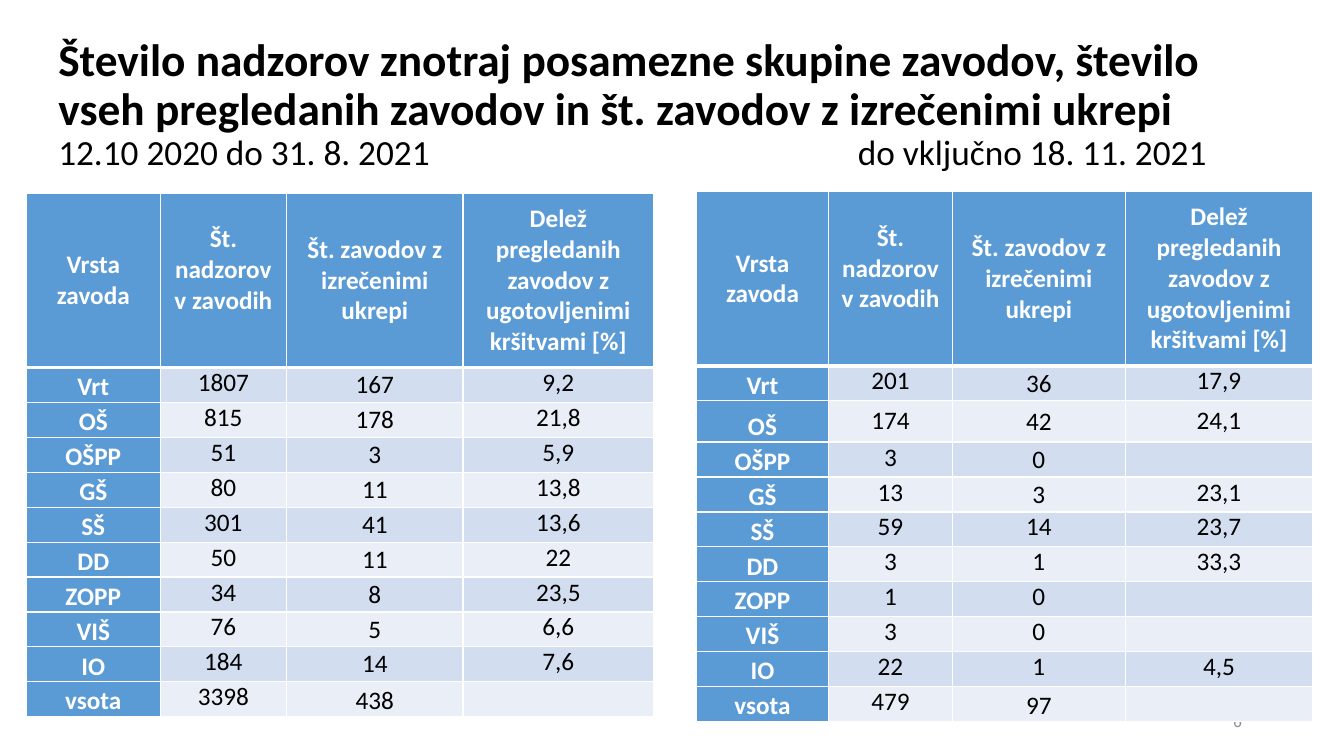
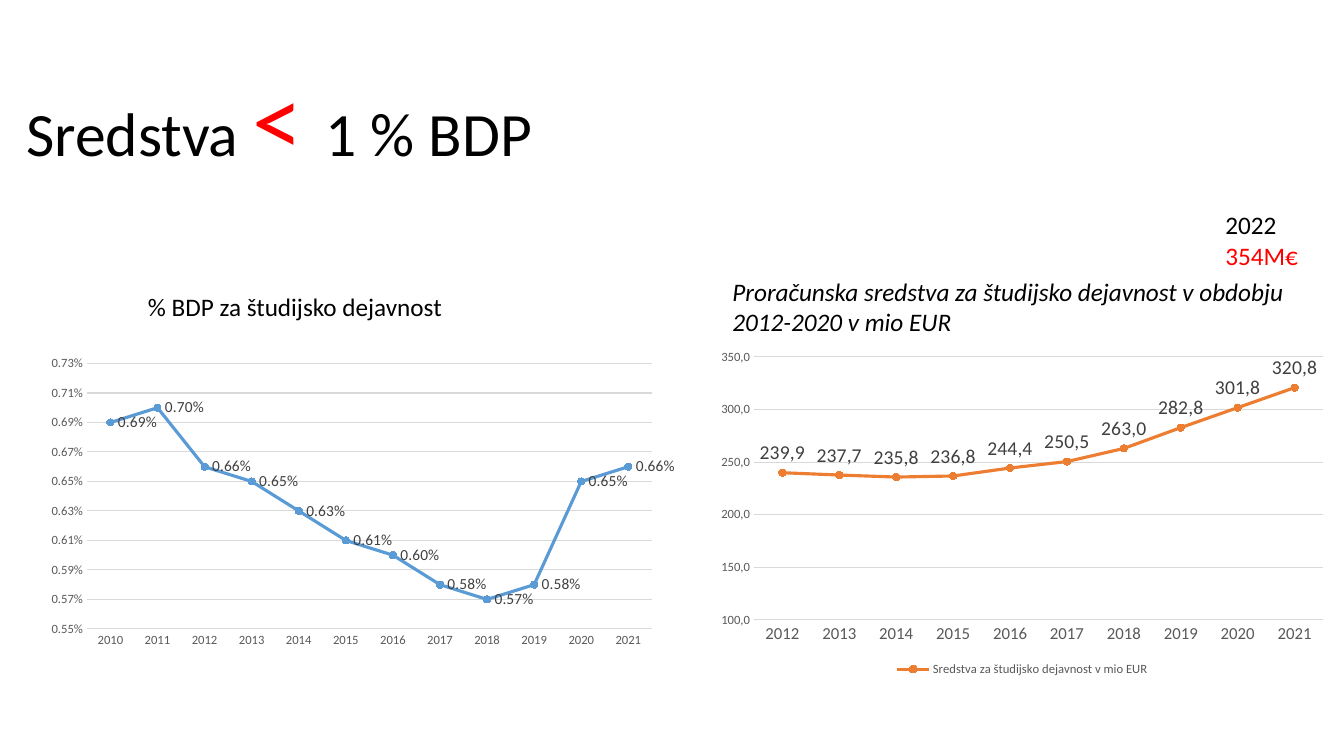
from lxml.etree import SubElement
from pptx import Presentation
from pptx.chart.data import CategoryChartData
from pptx.dml.color import RGBColor
from pptx.enum.chart import (XL_CHART_TYPE, XL_LABEL_POSITION, XL_LEGEND_POSITION,
                             XL_MARKER_STYLE, XL_TICK_MARK)
from pptx.enum.text import MSO_ANCHOR, PP_ALIGN
from pptx.oxml.ns import qn
from pptx.util import Cm, Pt

FONT = "Calibri"
BLACK = RGBColor(0x00, 0x00, 0x00)
WHITE = RGBColor(0xFF, 0xFF, 0xFF)
RED = RGBColor(0xFF, 0x00, 0x00)
BLUE = RGBColor(0x5B, 0x9B, 0xD5)
ORANGE = RGBColor(0xED, 0x7D, 0x31)
BAND_DARK = RGBColor(0xD2, 0xDE, 0xEF)
BAND_LIGHT = RGBColor(0xEA, 0xEF, 0xF7)
NUMBER_GREY = RGBColor(0x8C, 0x8C, 0x8C)
AXIS_GREY = RGBColor(0x59, 0x59, 0x59)
LABEL_GREY = RGBColor(0x40, 0x40, 0x40)
GRID_GREY = RGBColor(0xD9, 0xD9, 0xD9)

HEADER = ["Vrsta zavoda", "Št. nadzorov\nv zavodih", "Št. zavodov z izrečenimi ukrepi",
          "Delež pregledanih zavodov z ugotovljenimi kršitvami [%]"]
GROUPS = ["Vrt", "OŠ", "OŠPP", "GŠ", "SŠ", "DD", "ZOPP", "VIŠ", "IO", "vsota"]
FIRST_PERIOD = [
    ("1807", "167", "9,2"), ("815", "178", "21,8"), ("51", "3", "5,9"), ("80", "11", "13,8"),
    ("301", "41", "13,6"), ("50", "11", "22"), ("34", "8", "23,5"), ("76", "5", "6,6"),
    ("184", "14", "7,6"), ("3398", "438", ""),
]
SECOND_PERIOD = [
    ("201", "36", "17,9"), ("174", "42", "24,1"), ("3", "0", ""), ("13", "3", "23,1"),
    ("59", "14", "23,7"), ("3", "1", "33,3"), ("1", "0", ""), ("3", "0", ""),
    ("22", "1", "4,5"), ("479", "97", ""),
]
GDP_SHARES = [0.0069, 0.0070, 0.0066, 0.0065, 0.0063, 0.0061,
              0.0060, 0.0058, 0.0057, 0.0058, 0.0065, 0.0066]
BUDGET = [239.9, 237.7, 235.8, 236.8, 244.4, 250.5, 263.0, 282.8, 301.8, 320.8]


def style_font(font, size, color, bold=False, italic=False):
    """Set typeface, size, colour and emphasis."""
    font.name, font.size, font.bold, font.italic = FONT, Pt(size), bold, italic
    font.color.rgb = color


def add_span(para, text, size, color=BLACK, **emphasis):
    """Append one styled run to a paragraph."""
    span = para.add_run()
    span.text = text
    style_font(span.font, size, color, **emphasis)


def add_box(page, place, lines, anchor=MSO_ANCHOR.TOP):
    """Add a wrapping text box; each line is a list of (text, size, colour, emphasis)."""
    box = page.shapes.add_textbox(*map(Cm, place))
    frame = box.text_frame
    frame.word_wrap = True
    frame.vertical_anchor = anchor
    for index, spans in enumerate(lines):
        para = frame.add_paragraph() if index else frame.paragraphs[0]
        for text, size, color, emphasis in spans:
            add_span(para, text, size, color, **emphasis)
    return frame


def add_title(page, place, lines):
    """Add a vertically centred title with tight line spacing."""
    frame = add_box(page, place, lines, MSO_ANCHOR.MIDDLE)
    for para in frame.paragraphs:
        para.line_spacing = 0.9
    return frame


def add_tab_stop(para, position):
    """Give a paragraph one left tab stop."""
    stops = SubElement(para._p.get_or_add_pPr(), qn("a:tabLst"))
    SubElement(stops, qn("a:tab"), pos=str(position), algn="l")


def add_borders(cell, top, bottom):
    """Draw white cell borders; top and bottom widths are in points."""
    properties = cell._tc.get_or_add_tcPr()
    for side, width in (("L", 1), ("R", 1), ("T", top), ("B", bottom)):
        line = SubElement(properties, qn(f"a:ln{side}"), w=str(Pt(width)))
        fill = SubElement(line, qn("a:solidFill"))
        SubElement(fill, qn("a:srgbClr"), val=str(WHITE))


def fill_cell(cell, text, color, fill, anchor, bold, padding=(0, 0)):
    """Write centred text into a cell and set its fill, anchor and margins."""
    cell.fill.solid()
    cell.fill.fore_color.rgb = fill
    cell.vertical_anchor = anchor
    cell.margin_left = cell.margin_right = Cm(0.18)
    cell.margin_top, cell.margin_bottom = map(Cm, padding)
    for index, line in enumerate(text.split("\n")):
        para = cell.text_frame.add_paragraph() if index else cell.text_frame.paragraphs[0]
        para.alignment = PP_ALIGN.CENTER
        if line:
            add_span(para, line, 18, color, bold=bold)


def add_inspection_table(page, left, top, widths, records, tall_row=None, top_rows=()):
    """Add a table of inspections by kind of institution."""
    rows = [HEADER] + [(group, *record) for group, record in zip(GROUPS, records)]
    heights = [4.39] + [1.04 if row == tall_row else 0.88 for row in range(1, len(rows))]
    table = page.shapes.add_table(len(rows), len(widths), Cm(left), Cm(top),
                                  Cm(sum(widths)), Cm(sum(heights))).table
    table.first_row = table.horz_banding = False
    for column, width in zip(table.columns, widths):
        column.width = Cm(width)
    for row, texts in enumerate(rows):
        table.rows[row].height = Cm(heights[row])
        band = BAND_DARK if row % 2 else BAND_LIGHT
        for column, text in enumerate(texts):
            cell = table.cell(row, column)
            add_borders(cell, 3 if row == 1 else 1, 1 if row else 3)
            heading = row == 0 or column == 0
            anchor, padding = MSO_ANCHOR.MIDDLE, (0, 0)
            if row == 0:
                if column == 1:
                    anchor, padding = MSO_ANCHOR.TOP, (0.77, 0)
            elif column == 0 or (column == 2 and row == len(rows) - 1):
                anchor = MSO_ANCHOR.BOTTOM
            elif column != 2 or row in top_rows:
                anchor = MSO_ANCHOR.TOP
            if row == tall_row and column:
                padding = (0.13, 0.13)
            fill_cell(cell, text, WHITE if heading else BLACK, BLUE if heading else band,
                      anchor, heading, padding)


def set_plot_area(chart, **fractions):
    """Fix the inner plot area as fractions of the chart."""
    area = chart._chartSpace.chart.plotArea
    layout = area.find(qn("c:layout"))
    if layout is None:
        layout = SubElement(area, qn("c:layout"))
        area.insert(0, layout)
    manual = SubElement(layout, qn("c:manualLayout"))
    SubElement(manual, qn("c:layoutTarget"), val="inner")
    for mode in ("xMode", "yMode"):
        SubElement(manual, qn(f"c:{mode}"), val="edge")
    for key, value in fractions.items():
        SubElement(manual, qn(f"c:{key}"), val=str(value))


def add_line_chart(page, place, kind, name, first_year, values, color, scale,
                   number_format, category_size, label_size, label_position):
    """Add a line chart with markers and value labels, one point a year."""
    data = CategoryChartData(number_format=number_format)
    data.categories = [str(first_year + index) for index in range(len(values))]
    data.add_series(name, values)
    chart = page.shapes.add_chart(kind, *map(Cm, place), data).chart
    chart.has_title = chart.has_legend = False
    style_font(chart.font, 10, BLACK)

    for axis, size in ((chart.category_axis, category_size), (chart.value_axis, 9)):
        axis.major_tick_mark = axis.minor_tick_mark = XL_TICK_MARK.NONE
        style_font(axis.tick_labels.font, size, AXIS_GREY)
    values_axis = chart.value_axis
    values_axis.minimum_scale, values_axis.maximum_scale, values_axis.major_unit = scale
    values_axis.tick_labels.number_format = number_format
    values_axis.tick_labels.number_format_is_linked = False
    values_axis.format.line.fill.background()
    for line in (chart.category_axis.format.line, values_axis.major_gridlines.format.line):
        line.color.rgb = GRID_GREY
        line.width = Pt(0.75)

    plot = chart.plots[0]
    plot.vary_by_categories = False
    series = plot.series[0]
    series.smooth = False
    series.format.line.color.rgb = color
    series.format.line.width = Pt(2.25)
    series.marker.style = XL_MARKER_STYLE.CIRCLE
    series.marker.size = 5
    series.marker.format.fill.solid()
    series.marker.format.fill.fore_color.rgb = color
    series.marker.format.line.color.rgb = color

    labels = series.data_labels
    labels.show_value = True
    labels.position = label_position
    labels.number_format = number_format
    labels.number_format_is_linked = False
    style_font(labels.font, label_size, LABEL_GREY)
    return chart


def build_inspections(page):
    """Build the slide with inspections in two periods."""
    heading = ("Število nadzorov znotraj posamezne skupine zavodov, število vseh "
               "pregledanih zavodov in št. zavodov z izrečenimi ukrepi")
    periods = "12.10 2020 do 31. 8. 2021\tdo vključno 18. 11. 2021"
    title = add_title(page, (1.22, 0.38, 31.57, 4.55),
                      [[(heading, 32.4, BLACK, {"bold": True})], [(periods, 25.2, BLACK, {})]])
    add_tab_stop(title.paragraphs[1], Cm(20.15))
    number = add_box(page, (23.93, 17.65, 7.62, 1.02), [[("6", 12, NUMBER_GREY, {})]],
                     MSO_ANCHOR.MIDDLE)
    number.paragraphs[0].alignment = PP_ALIGN.RIGHT
    add_inspection_table(page, 0.66, 4.87, (3.38, 3.18, 4.45, 4.8), FIRST_PERIOD)
    add_inspection_table(page, 17.55, 4.83, (3.33, 3.12, 4.36, 4.72), SECOND_PERIOD,
                         tall_row=2, top_rows=range(5, 10))


def build_funding(page):
    """Build the slide with the funding of study activities."""
    add_title(page, (0.41, 0.97, 32.87, 4.32),
              [[("Sredstva ", 44, BLACK, {}), ("< ", 72, RED, {}), ("1 % BDP", 44, BLACK, {})]])
    shares = add_line_chart(page, (1.07, 8.61, 16, 7.87), XL_CHART_TYPE.LINE_MARKERS_STACKED,
                            "% BDP", 2010, GDP_SHARES, BLUE, (0.0055, 0.0073, 0.0002),
                            "0.00%", 9, 11, XL_LABEL_POSITION.RIGHT)
    set_plot_area(shares, x=0.07, y=0.07, w=0.89, h=0.85)
    budget = add_line_chart(page, (17.86, 8.64, 15.8, 8.51), XL_CHART_TYPE.LINE_MARKERS,
                            "Sredstva za študijsko dejavnost v mio EUR", 2012, BUDGET, ORANGE,
                            (100, 350, 50), "[$-10424]#,##0.0", 12, 14,
                            XL_LABEL_POSITION.ABOVE)
    budget.has_legend = True
    budget.legend.position = XL_LEGEND_POSITION.BOTTOM
    budget.legend.include_in_layout = False
    style_font(budget.legend.font, 9, AXIS_GREY)
    add_box(page, (3.48, 7.21, 13.36, 1.02), [[("% BDP za študijsko dejavnost", 18, BLACK, {})]])
    caption = "Proračunska sredstva za študijsko dejavnost v obdobju 2012-2020 v mio EUR"
    add_box(page, (18.21, 6.83, 15.04, 1.8), [[(caption, 18, BLACK, {"italic": True})]])
    add_box(page, (30.63, 5.16, 2.82, 1.8),
            [[("2022", 18, BLACK, {})], [("354M€", 18, RED, {})]])


def main():
    """Build the deck and save it."""
    deck = Presentation()
    deck.slide_width, deck.slide_height = Cm(33.87), Cm(19.05)
    for build in (build_inspections, build_funding):
        build(deck.slides.add_slide(deck.slide_layouts[6]))
    deck.save("out.pptx")


if __name__ == "__main__":
    main()
